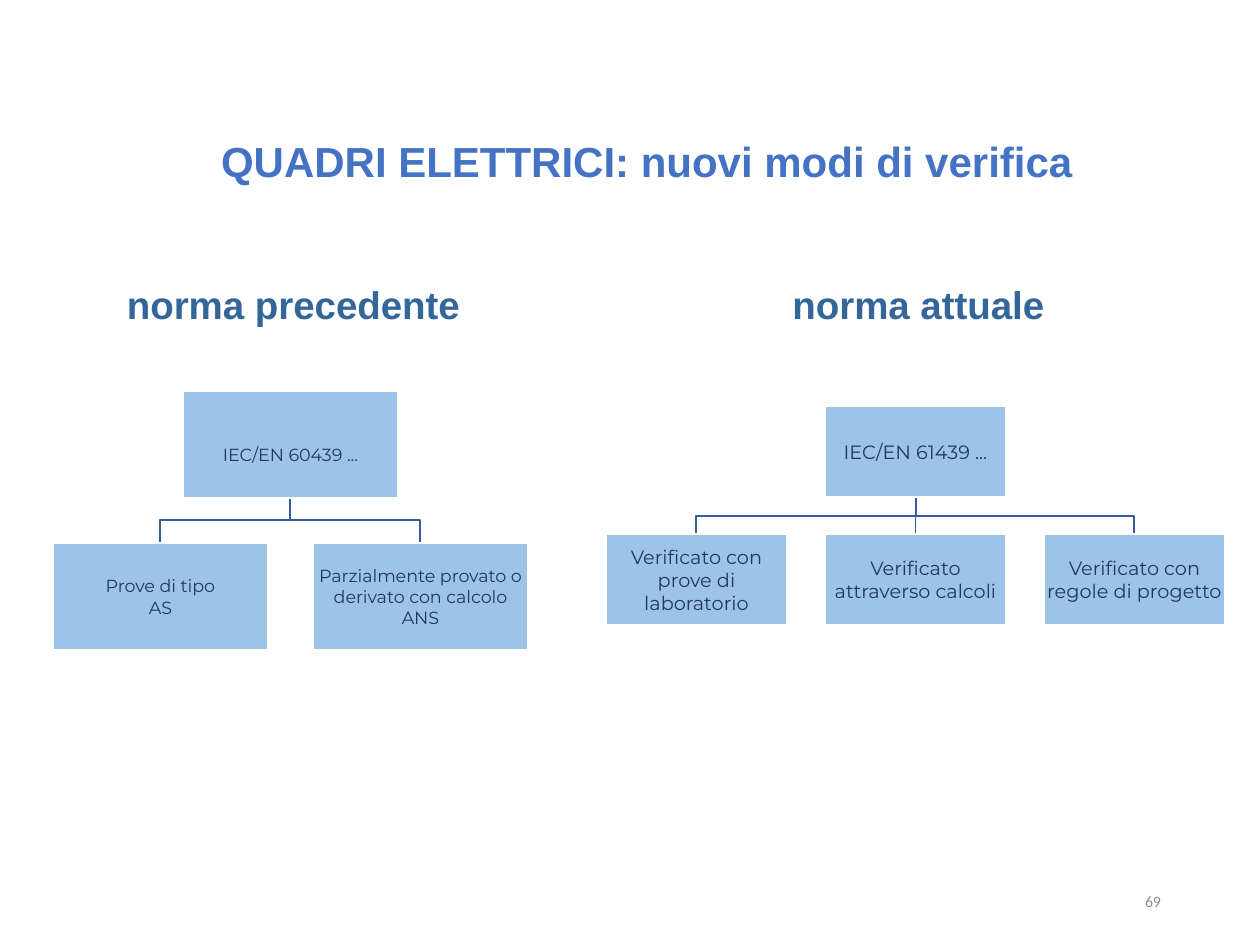
import pptx
import pptx.util
import pptx.dml.color
import pptx.enum.shapes
import pptx.enum.text
import pptx.oxml.ns
import lxml.etree

EMU_PER_PX = 914400 / 126
ALIGN = pptx.enum.text.PP_ALIGN
ANCHOR = pptx.enum.text.MSO_ANCHOR
LINK = "365B9D"


def px(n):
    return pptx.util.Emu(round(n * EMU_PER_PX))


def rgb(value):
    return pptx.dml.color.RGBColor.from_string(value)


def fill_text(tf, lines, size, font, color, bold=False, align=ALIGN.CENTER,
              anchor=ANCHOR.MIDDLE, insets=(12, 6, 12, 6)):
    tf.word_wrap = True
    tf.auto_size = pptx.enum.text.MSO_AUTO_SIZE.NONE
    tf.vertical_anchor = anchor
    tf.margin_left, tf.margin_top, tf.margin_right, tf.margin_bottom = map(px, insets)
    for i, line in enumerate(lines):
        p = tf.add_paragraph() if i else tf.paragraphs[0]
        p.alignment = align
        r = p.add_run()
        r.text = line
        r.font.size = pptx.util.Pt(size)
        r.font.name = font
        r.font.bold = bold
        r.font.color.rgb = rgb(color)


def add_title(s, text):
    sp = s.shapes.title
    sp.left, sp.top, sp.width, sp.height = map(px, (34, 122, 1226, 78))
    fill_text(sp.text_frame, [text], 24, "Arial", "4472C4", bold=True)


def add_label(s, x, y, w, h, text, size, font, color, **options):
    sp = s.shapes.add_textbox(px(x), px(y), px(w), px(h))
    fill_text(sp.text_frame, [text], size, font, color, **options)


def add_box(s, x, y, w, h, lines, size, top_inset=1):
    sp = s.shapes.add_shape(pptx.enum.shapes.MSO_SHAPE.RECTANGLE,
                            px(x), px(y), px(w), px(h))
    sp.shadow.inherit = False
    sp.fill.solid()
    sp.fill.fore_color.rgb = rgb("9DC3E6")
    sp.line.color.rgb = rgb("FFFFFF")
    sp.line.width = pptx.util.Pt(1)
    fill_text(sp.text_frame, lines, size, "Montserrat", "203864",
              insets=(1, top_inset, 1, 1))
    return sp


def style_link(sp):
    sp.line.color.rgb = rgb(LINK)
    sp.line.width = pptx.util.Pt(1)


def add_elbow(s, x1, y1, x2, y2):
    mid = (y1 + y2) / 2
    builder = s.shapes.build_freeform(x1, y1, scale=EMU_PER_PX)
    builder.add_line_segments([(x1, mid), (x2, mid), (x2, y2)], close=False)
    sp = builder.convert_to_shape()
    sp.shadow.inherit = False
    sp.fill.background()
    style_link(sp)


def add_straight(s, x1, y1, x2, y2):
    sp = s.shapes.add_connector(pptx.enum.shapes.MSO_CONNECTOR.STRAIGHT,
                                px(x1), px(y1), px(x2), px(y2))
    style_link(sp)
    lxml.etree.SubElement(sp._element.spPr, pptx.oxml.ns.qn("a:effectLst"))
    return sp


def add_tree(s, x, root_y, leaf_y, w, h, step, root, leaves, size, root_inset=1):
    root_x = x + step * (len(leaves) - 1) / 2
    leaf_xs = [x + step * i for i in range(len(leaves))]
    straight = {}
    for i, leaf_x in enumerate(leaf_xs):
        ends = (root_x + w / 2, root_y + h, leaf_x + w / 2, leaf_y)
        if leaf_x == root_x:
            straight[i] = add_straight(s, *ends)
        else:
            add_elbow(s, *ends)
    root_box = add_box(s, root_x, root_y, w, h, [root], size, root_inset)
    for i, (leaf_x, lines) in enumerate(zip(leaf_xs, leaves)):
        leaf_box = add_box(s, leaf_x, leaf_y, w, h, lines, size)
        if i in straight:
            straight[i].begin_connect(root_box, 2)
            straight[i].end_connect(leaf_box, 0)


def main():
    prs = pptx.Presentation()
    prs.slide_width, prs.slide_height = px(1260), px(945)
    s = prs.slides.add_slide(prs.slide_layouts[5])
    add_title(s, "QUADRI ELETTRICI: nuovi modi di verifica")
    add_tree(s, 606, 406, 534, 181, 91, 219, "IEC/EN 61439 ...",
             [["Verificato con prove di laboratorio"],
              ["Verificato attraverso calcoli"],
              ["Verificato con regole di progetto"]], 11)
    add_tree(s, 53, 391, 543, 215, 107, 260, "IEC/EN 60439 ...",
             [["Prove di tipo", "AS"],
              ["Parzialmente provato o derivato con calcolo", "ANS"]], 10, 22)
    for x, text in ((105, "norma precedente"), (730, "norma attuale")):
        add_label(s, x, 275, 377, 59, text, 22, "Arial", "336699",
                  bold=True, anchor=ANCHOR.TOP)
    add_label(s, 890, 876, 283, 50, "69", 9, "Calibri", "8C8C8C", align=ALIGN.RIGHT)
    prs.save("out.pptx")


if __name__ == "__main__":
    main()
